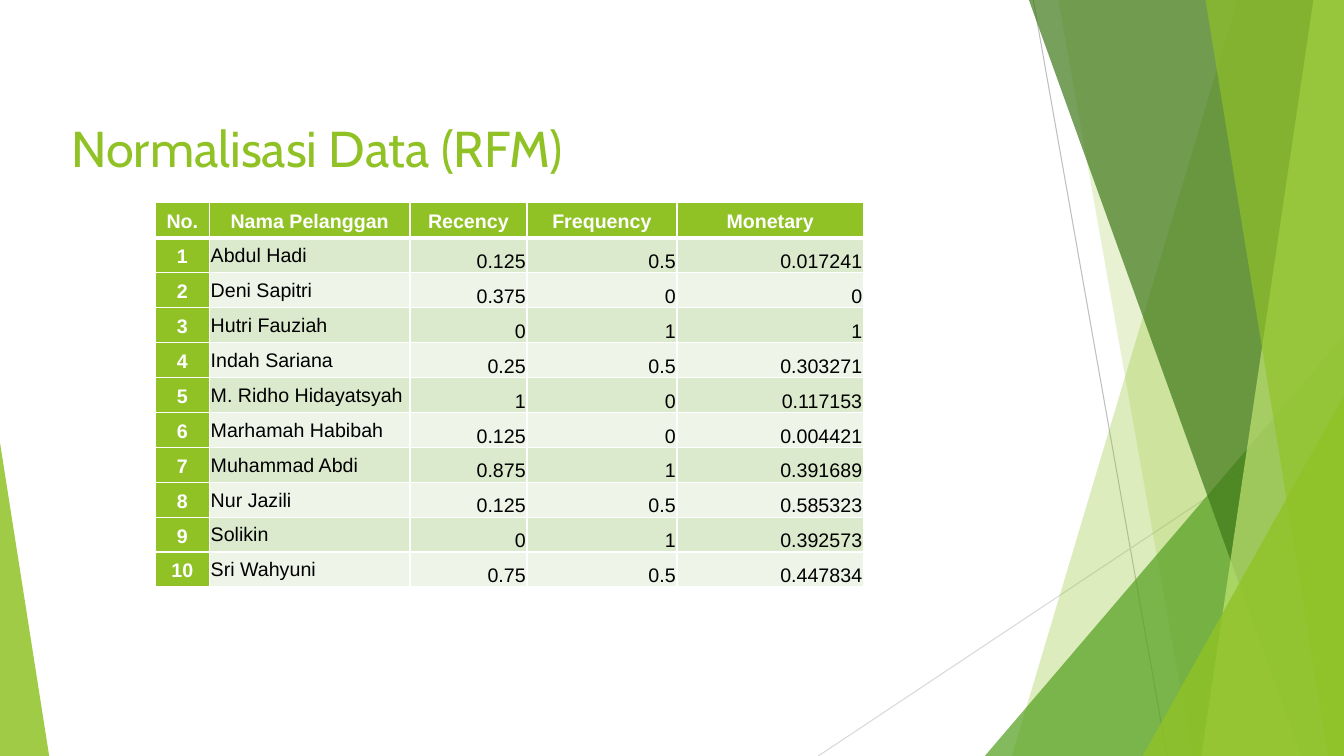
from lxml import etree
from pptx import Presentation
from pptx import util as u
from pptx.dml.color import RGBColor
from pptx.enum import shapes, text
from pptx.oxml import ns

GREEN = RGBColor(0x90, 0xC2, 0x26)
MID_GREEN = RGBColor(0x54, 0xA0, 0x21)
DARK_GREEN = RGBColor(0x3F, 0x78, 0x19)
LIME = RGBColor(0xC0, 0xE4, 0x74)
BAND_DARK = RGBColor(0xDB, 0xE9, 0xCD)
BAND_LIGHT = RGBColor(0xEE, 0xF4, 0xE8)
GREY = RGBColor(0xBF, 0xBF, 0xBF)
PALE_GREY = RGBColor(0xD9, 0xD9, 0xD9)
WHITE = RGBColor(0xFF, 0xFF, 0xFF)
BLACK = RGBColor(0, 0, 0)

WIDTH, HEIGHT = 33.87, 19.05
COLUMN_WIDTHS = [1.37, 5.05, 2.95, 3.78, 4.7]
ROW_HEIGHT = 0.88
HEADER = ["No.", "Nama Pelanggan", "Recency", "Frequency", "Monetary"]
CUSTOMERS = [
    ("Abdul Hadi", "0.125", "0.5", "0.017241"),
    ("Deni Sapitri", "0.375", "0", "0"),
    ("Hutri Fauziah", "0", "1", "1"),
    ("Indah Sariana", "0.25", "0.5", "0.303271"),
    ("M. Ridho Hidayatsyah", "1", "0", "0.117153"),
    ("Marhamah Habibah", "0.125", "0", "0.004421"),
    ("Muhammad Abdi", "0.875", "1", "0.391689"),
    ("Nur Jazili", "0.125", "0.5", "0.585323"),
    ("Solikin", "0", "1", "0.392573"),
    ("Sri Wahyuni", "0.75", "0.5", "0.447834"),
]


class SlideBuilder:
    title_font = "Cabin"
    table_font = "Arial"

    def __init__(self, presentation):
        self.slide = presentation.slides.add_slide(presentation.slide_layouts[6])
        self.shapes = self.slide.shapes

    def paint(self, shape, color, opacity):
        """Fill a shape with a see-through colour, without outline or shadow."""
        shape.shadow.inherit = False
        shape.fill.solid()
        shape.fill.fore_color.rgb = color
        shape.line.fill.background()
        color_element = shape._element.spPr.find(".//" + ns.qn("a:srgbClr"))
        etree.SubElement(color_element, ns.qn("a:alpha"), val=str(opacity * 1000))

    def line(self, start, end, color):
        points = [u.Cm(value) for value in (*start, *end)]
        connector = self.shapes.add_connector(shapes.MSO_CONNECTOR.STRAIGHT, *points)
        connector.line.color.rgb = color
        connector.line.width = u.Pt(0.75)
        etree.SubElement(connector._element.spPr, ns.qn("a:effectLst"))

    def facet(self, top_left, bottom_left, color, opacity):
        """Draw a full-height panel with a slanted left edge, up to the right slide edge."""
        corners = [(top_left, 0), (WIDTH, 0), (WIDTH, HEIGHT), (bottom_left, HEIGHT)]
        points = [(u.Cm(x), u.Cm(y)) for x, y in corners]
        builder = self.shapes.build_freeform(*points[0])
        builder.add_line_segments(points[1:], close=True)
        self.paint(builder.convert_to_shape(), color, opacity)

    def triangle(self, left, top, width, apex, color, opacity):
        """Draw a triangle that stands on the bottom slide edge."""
        shape = self.shapes.add_shape(
            shapes.MSO_SHAPE.ISOSCELES_TRIANGLE,
            u.Cm(left), u.Cm(top), u.Cm(width), u.Cm(HEIGHT - top))
        shape.adjustments[0] = apex
        self.paint(shape, color, opacity)

    def format_text(self, paragraph, font, size, color, bold=False):
        for run in paragraph.runs:
            run.font.name = font
            run.font.size = u.Pt(size)
            run.font.color.rgb = color
            run.font.bold = bold

    def title(self, words, left, top, width, height):
        box = self.shapes.add_textbox(u.Cm(left), u.Cm(top), u.Cm(width), u.Cm(height))
        box.text_frame.word_wrap = True
        box.text_frame.text = words
        self.format_text(box.text_frame.paragraphs[0], self.title_font, 36, GREEN)

    def borders(self, cell, top, bottom):
        """Give a cell white borders; top and bottom are widths in points."""
        properties = cell._tc.get_or_add_tcPr()
        for side, width in (("L", 1), ("R", 1), ("T", top), ("B", bottom)):
            edge = etree.SubElement(properties, ns.qn("a:ln" + side), w=str(u.Pt(width)))
            fill = etree.SubElement(edge, ns.qn("a:solidFill"))
            etree.SubElement(fill, ns.qn("a:srgbClr"), val=str(WHITE))

    def cell(self, cell, words, row, column):
        cell.text = words
        paragraph = cell.text_frame.paragraphs[0]
        heading = row == 0 or column == 0
        self.borders(cell, 3 if row == 1 else 1, 3 if row == 0 else 1)
        cell.margin_left = cell.margin_right = u.Cm(0.18 if heading else 0.03)
        cell.margin_top = u.Cm(0 if heading else 0.03)
        cell.margin_bottom = 0
        cell.vertical_anchor = text.MSO_ANCHOR.MIDDLE
        if heading:
            fill = GREEN
            paragraph.alignment = text.PP_ALIGN.CENTER
            paragraph.line_spacing = 1.15
        else:
            fill = BAND_DARK if row % 2 else BAND_LIGHT
            if column > 1:
                cell.vertical_anchor = text.MSO_ANCHOR.BOTTOM
                paragraph.alignment = text.PP_ALIGN.RIGHT
        cell.fill.solid()
        cell.fill.fore_color.rgb = fill
        self.format_text(paragraph, self.table_font, 14, WHITE if heading else BLACK, heading)

    def table(self, rows, left, top):
        table = self.shapes.add_table(
            len(rows), len(COLUMN_WIDTHS), u.Cm(left), u.Cm(top),
            u.Cm(sum(COLUMN_WIDTHS)), u.Cm(ROW_HEIGHT * len(rows))).table
        for column, width in zip(table.columns, COLUMN_WIDTHS):
            column.width = u.Cm(width)
        for row, values in enumerate(rows):
            table.rows[row].height = u.Cm(ROW_HEIGHT)
            for column, words in enumerate(values):
                self.cell(table.cell(row, column), words, row, column)


def main():
    presentation = Presentation()
    presentation.slide_width = u.Cm(WIDTH)
    presentation.slide_height = u.Cm(HEIGHT)
    builder = SlideBuilder(presentation)

    builder.line((26.04, 0), (29.41, HEIGHT), GREY)
    builder.line((WIDTH, 10.24), (20.62, HEIGHT), PALE_GREY)
    builder.facet(31.19, 25.5, GREEN, 30)
    builder.facet(26.67, 30.05, GREEN, 20)
    builder.triangle(24.82, 8.46, WIDTH - 24.82, 1, MID_GREEN, 72)
    builder.facet(25.93, 32.79, DARK_GREEN, 70)
    builder.facet(33.1, 30.28, LIME, 70)
    builder.facet(30.38, 33.48, GREEN, 65)
    builder.triangle(28.8, 9.98, WIDTH - 28.8, 1, GREEN, 80)
    builder.triangle(0, 11.15, 1.24, 0, GREEN, 85)

    builder.title("Normalisasi Data (RFM)", 1.55, 2.82, 15.82, 3.66)
    numbered = [(str(number), *customer) for number, customer in enumerate(CUSTOMERS, 1)]
    builder.table([HEADER, *numbered], 3.91, 5.11)

    presentation.save("out.pptx")


if __name__ == "__main__":
    main()
